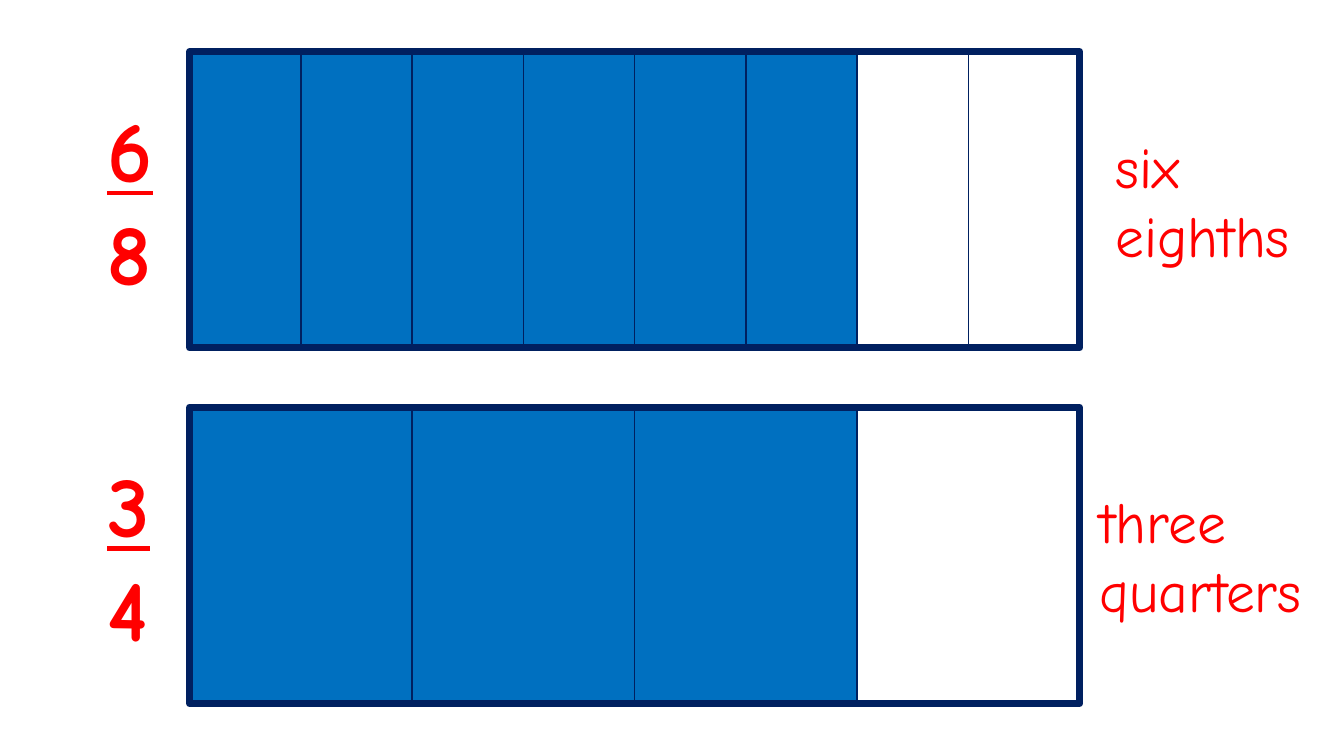
"""Compare six eighths with three quarters as fraction bars."""
import pptx
import pptx.dml.color
import pptx.enum.shapes
import pptx.enum.text
import pptx.util

Cm = pptx.util.Cm
COLOURS = {"shaded": "0070C0", "outline": "002060", "label": "FF0000"}
BAR_LEFT, BAR_WIDTH, BAR_HEIGHT = 4.78, 22.43, 7.47


def rgb(name):
    """Return the named colour."""
    return pptx.dml.color.RGBColor.from_string(COLOURS[name])


def write(paragraph, text, size, bold=False, underline=False):
    """Add a formatted run to a paragraph."""
    run = paragraph.add_run()
    run.text = text
    run.font.name = "Comic Neue"
    run.font.size = pptx.util.Pt(size)
    run.font.bold = bold
    run.font.underline = underline
    run.font.color.rgb = rgb("label")


class FractionSlide:
    """Hold the current slide and draw its fraction parts."""

    def __init__(self, presentation):
        """Add a blank slide."""
        self.slide = presentation.slides.add_slide(presentation.slide_layouts[6])

    def rectangle(self, left, top, width, fill=None, line=None):
        """Draw a bar-high rectangle, filled or outlined."""
        area = self.slide.shapes.add_shape(
            pptx.enum.shapes.MSO_SHAPE.RECTANGLE,
            Cm(left), Cm(top), Cm(width), Cm(BAR_HEIGHT))
        area.shadow.inherit = False
        if fill:
            area.fill.solid()
            area.fill.fore_color.rgb = rgb(fill)
        else:
            area.fill.background()
        if line:
            area.line.color.rgb = rgb("outline")
            area.line.width = pptx.util.Pt(line)
        else:
            area.line.fill.background()

    def bar(self, top, shaded, parts):
        """Draw a bar of equal parts with the first ones shaded."""
        part_width = BAR_WIDTH / parts
        lefts = [BAR_LEFT + index * part_width for index in range(parts)]
        for left in lefts[:shaded]:
            self.rectangle(left, top, part_width, fill="shaded")
        self.rectangle(BAR_LEFT, top, BAR_WIDTH, line=5)
        for left in lefts:
            self.rectangle(left, top, part_width, line=1)

    def text_frame(self, left, top, width, height, wrap):
        """Add a text box and return its frame."""
        frame = self.slide.shapes.add_textbox(
            Cm(left), Cm(top), Cm(width), Cm(height)).text_frame
        frame.word_wrap = wrap
        frame.auto_size = pptx.enum.text.MSO_AUTO_SIZE.SHAPE_TO_FIT_TEXT
        return frame

    def fraction(self, top, numerator, denominator):
        """Write a fraction with its numerator underlined."""
        frame = self.text_frame(2.46, top, 1.85, 5.54, wrap=False)
        write(frame.paragraphs[0], str(numerator), 61.7, bold=True, underline=True)
        write(frame.add_paragraph(), str(denominator), 61.7, bold=True)

    def words(self, left, top, width, text):
        """Write a fraction in words."""
        frame = self.text_frame(left, top, width, 3.78, wrap=True)
        write(frame.paragraphs[0], text, 41.1)


def main():
    """Build and save the slide."""
    presentation = pptx.Presentation()
    presentation.slide_width, presentation.slide_height = Cm(33.87), Cm(19.05)
    page = FractionSlide(presentation)
    fractions = [
        (1.3, 6, 8, "six eighths", 27.86, 6.1),
        (10.26, 3, 4, "three quarters", 27.46, 6.73),
    ]
    for top, shaded, parts, name, name_left, name_width in fractions:
        page.bar(top, shaded, parts)
        page.fraction(top + 0.99, shaded, parts)
        page.words(name_left, top + 1.87, name_width, name)
    presentation.save("out.pptx")


if __name__ == "__main__":
    main()
